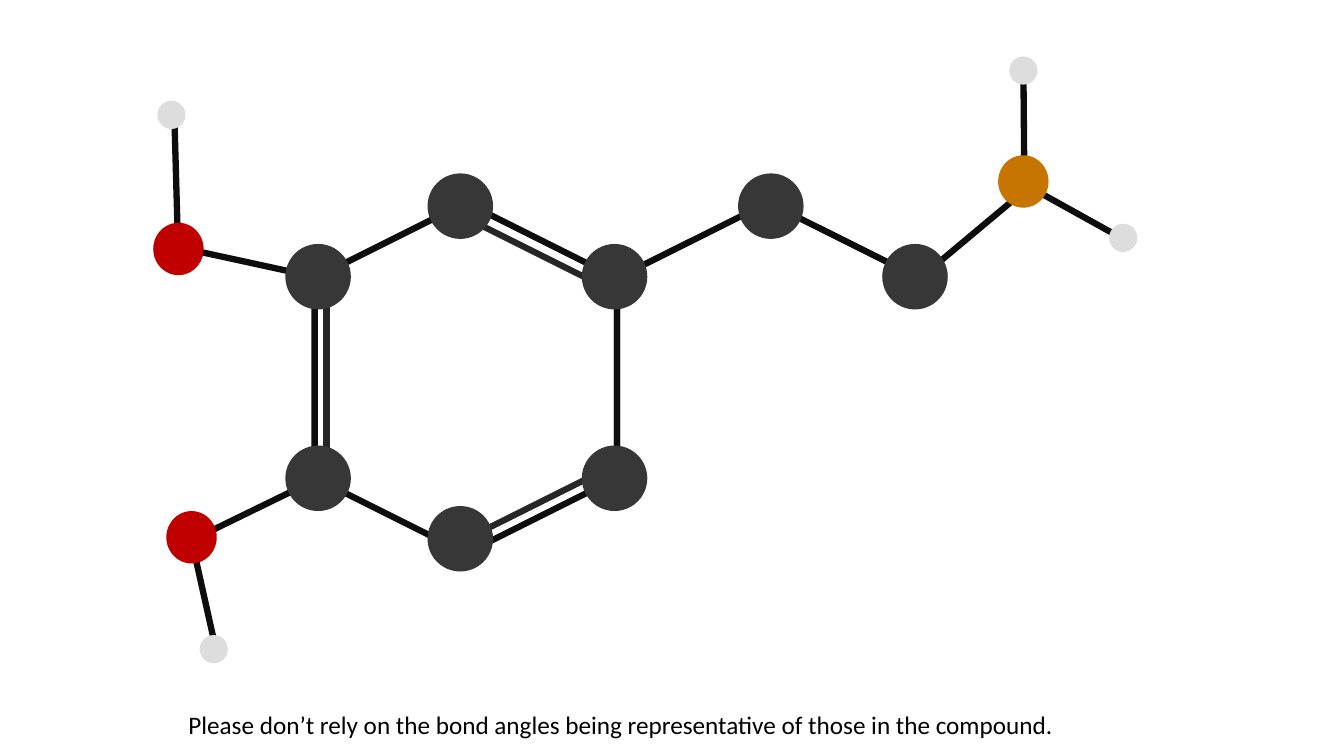
import pptx
import pptx.util
import pptx.dml.color
import pptx.enum.shapes
import pptx.oxml

PX = 9144
KIND = pptx.enum.shapes.MSO_SHAPE
BLACK = "0D0D0D"
INNER = "262626"

ATOMS = {
    "carbon": (65, 65, "373737", [
        (272, 116), (131, 186), (425, 186), (131, 386),
        (272, 446), (425, 386), (580, 116), (723, 186)]),
    "oxygen": (50, 52, "C00000", [(13, 451), (0, 165)]),
    "nitrogen": (50, 52, "C57500", [(838, 98)]),
    "hydrogen": (28, 28, "DDDDDD", [
        (46, 574), (4, 44), (849, 0), (948, 166)]),
}
BONDS = {
    BLACK: [
        (61, 583, 38, 480), (36, 481, 163, 419),
        (21, 62, 24, 168), (24, 189, 162, 219),
        (862, 135, 758, 222), (863, 10, 864, 126),
        (960, 180, 861, 125)],
    INNER: [
        (446, 228, 306, 158), (308, 480, 448, 410),
        (172, 226, 172, 411)],
}
CHAIN = [(460, 418), (460, 220), (610, 145), (760, 220)]


def emu(*nums):
    return [pptx.util.Emu(num * PX) for num in nums]


def color(code):
    return pptx.dml.color.RGBColor.from_string(code)


def stroke(line, code):
    line.color.rgb = color(code)
    line.width = pptx.util.Pt(4.5)


def outline(shape):
    shape.shadow.inherit = False
    shape.fill.background()
    stroke(shape.line, BLACK)


def bond(slide, ends, code):
    line = slide.shapes.add_connector(
        pptx.enum.shapes.MSO_CONNECTOR.STRAIGHT, *emu(*ends))
    stroke(line.line, code)
    line._element.spPr.append(pptx.oxml.parse_xml(
        '<a:effectLst xmlns:a='
        '"http://schemas.openxmlformats.org/drawingml/2006/main"/>'))


def atom(slide, box, code):
    ball = slide.shapes.add_shape(KIND.OVAL, *emu(*box))
    ball.shadow.inherit = False
    ball.fill.solid()
    ball.fill.fore_color.rgb = color(code)
    ball.line.fill.background()


def draw_model(slide, box):
    left, top = box[:2]
    build = slide.shapes.build_freeform(*CHAIN[0], scale=PX)
    build.add_line_segments(CHAIN[1:], close=False)
    outline(build.convert_to_shape(*emu(left, top)))
    for code, bonds in BONDS.items():
        for x1, y1, x2, y2 in bonds:
            bond(slide, (left + x1, top + y1, left + x2, top + y2), code)
    ring = slide.shapes.add_shape(
        KIND.HEXAGON, *emu(left + 136, top + 169, 348, 300))
    ring.rotation = 90
    outline(ring)
    for wide, high, code, spots in ATOMS.values():
        for x, y in spots:
            atom(slide, (left + x, top + y, wide, high), code)


def draw_note(slide, box):
    frame = slide.shapes.add_textbox(*emu(*box)).text_frame
    frame.word_wrap = True
    frame.text = ("Please don’t rely on the bond angles being "
                  "representative of those in the compound.")
    font = frame.paragraphs[0].runs[0].font
    font.name = "Calibri"
    font.size = pptx.util.Pt(18)
    font.color.rgb = color("000000")


def main():
    deck = pptx.Presentation()
    deck.slide_width, deck.slide_height = emu(1333, 750)
    slide = deck.slides.add_slide(deck.slide_layouts[6])
    draw_model(slide, (152, 56, 976, 602))
    draw_note(slide, (177, 699, 978, 40))
    deck.save("out.pptx")


if __name__ == "__main__":
    main()
